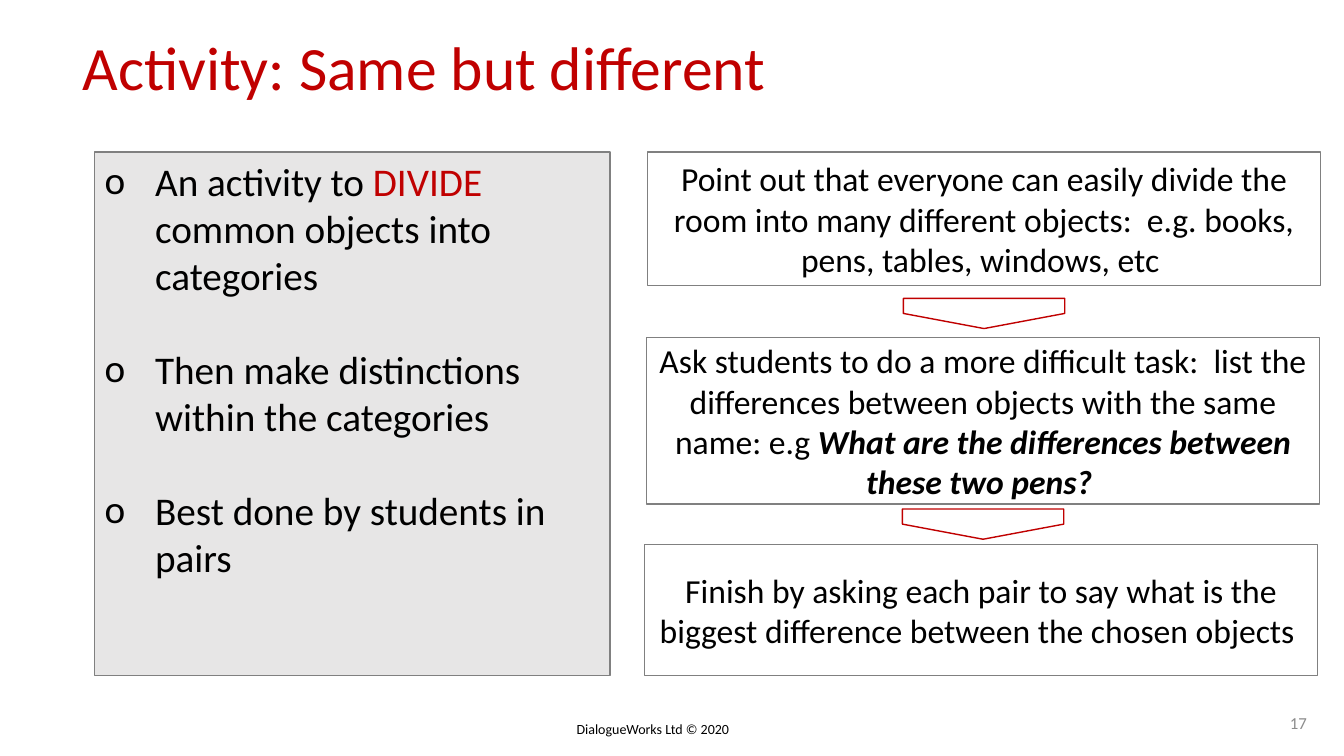
"""Build the activity slide: a bulleted panel beside three steps joined by arrows."""
from dataclasses import dataclass

from lxml import etree
from pptx import Presentation
from pptx.dml.color import RGBColor
from pptx.enum.shapes import MSO_SHAPE
from pptx.enum.text import MSO_ANCHOR, PP_ALIGN
from pptx.oxml.ns import qn
from pptx.util import Inches, Pt

RECTANGLE, PENTAGON = MSO_SHAPE.RECTANGLE, MSO_SHAPE.PENTAGON
TOP, MIDDLE = MSO_ANCHOR.TOP, MSO_ANCHOR.MIDDLE
LEFT, CENTER, RIGHT = PP_ALIGN.LEFT, PP_ALIGN.CENTER, PP_ALIGN.RIGHT

FONT = "Calibri"
COLORS = {
    "red": "C00000",
    "black": "000000",
    "gray": "808080",
    "panel": "E7E6E6",
    "number": "8C8C8C",
}
ARROW_LENGTH, ARROW_DEPTH = 1.6, 0.3
BULLET_INDENT = 0.5
BULLET_GAP = 33.5


@dataclass(frozen=True)
class Span:
    text: str
    color: str = "black"
    strong: bool = False


@dataclass(frozen=True)
class TextStyle:
    size: float
    align: PP_ALIGN = LEFT
    anchor: MSO_ANCHOR = TOP
    wrap: bool = True
    bullet: str = ""
    gap: float = 0
    line_spacing: float = 1.0


@dataclass(frozen=True)
class Block:
    area: tuple[float, float, float, float]
    style: TextStyle
    paragraphs: list[list[Span]]
    framed: bool = False
    fill: str = ""


STEP = TextStyle(24, CENTER, MIDDLE)
BLOCKS = [
    Block((5.62, 7.1, 1.75, 0.27), TextStyle(10, wrap=False),
          [[Span("DialogueWorks Ltd © 2020")]]),
    Block((12.55, 6.97, 0.51, 0.4), TextStyle(12, RIGHT, MIDDLE),
          [[Span("17", "number")]]),
    Block((0.72, 0.32, 9.79, 1.06), TextStyle(44, line_spacing=0.9),
          [[Span("Activity: Same but different", "red")]]),
    Block((0.94, 1.51, 5.11, 5.19), TextStyle(28, bullet="o", gap=BULLET_GAP), [
        [Span("An activity to "), Span("DIVIDE", "red"),
         Span(" common objects into categories")],
        [Span("Then make distinctions within the categories")],
        [Span("Best done by students in pairs")],
    ], framed=True, fill="panel"),
    Block((6.42, 1.51, 6.68, 1.32), STEP, [[Span(
        "Point out that everyone can easily divide the room into many different "
        "objects:  e.g. books, pens, tables, windows, etc ")]], framed=True),
    Block((6.41, 3.35, 6.68, 1.65), STEP, [[
        Span("Ask students to do a more difficult task:  list the differences "
             "between objects with the same name: e.g "),
        Span("What are the differences between these two pens? ", strong=True),
    ]], framed=True),
    Block((6.39, 5.4, 6.68, 1.3), STEP, [[Span(
        "Finish by asking each pair to say what is the biggest difference "
        "between the chosen objects ")]], framed=True),
]
ARROW_CENTERS = [(9.76, 3.11), (9.75, 5.2)]


def rgb(name: str) -> RGBColor:
    return RGBColor.from_string(COLORS[name])


def apply_format(target, values: dict) -> None:
    for name, value in values.items():
        setattr(target, name, value)


def add_outlined(page, kind, area, line: str, fill: str = ""):
    shape = page.shapes.add_shape(kind, *map(Inches, area))
    shape.shadow.inherit = False
    if fill:
        shape.fill.solid()
        shape.fill.fore_color.rgb = rgb(fill)
    else:
        shape.fill.background()
    shape.line.color.rgb = rgb(line)
    shape.line.width = Pt(1)
    return shape


def add_bullet(para, character: str) -> None:
    properties = para._p.get_or_add_pPr()
    indent = Inches(BULLET_INDENT)
    properties.set("marL", str(indent))
    properties.set("indent", str(-indent))
    etree.SubElement(properties, qn("a:buFont"), typeface=FONT)
    etree.SubElement(properties, qn("a:buChar"), char=character)


def write_paragraph(para, spans: list[Span], style: TextStyle, gap: float) -> None:
    if style.bullet:
        add_bullet(para, style.bullet)
    apply_format(para, {"alignment": style.align, "space_before": Pt(gap),
                        "line_spacing": style.line_spacing})
    for span in spans:
        run = para.add_run()
        run.text = span.text
        apply_format(run.font, {"name": FONT, "size": Pt(style.size),
                                "bold": span.strong, "italic": span.strong})
        run.font.color.rgb = rgb(span.color)


def draw_block(page, block: Block) -> None:
    if block.framed:
        box = add_outlined(page, RECTANGLE, block.area, "gray", block.fill)
    else:
        box = page.shapes.add_textbox(*map(Inches, block.area))
    frame = box.text_frame
    apply_format(frame, {"word_wrap": block.style.wrap,
                         "vertical_anchor": block.style.anchor})
    for index, spans in enumerate(block.paragraphs):
        para = frame.add_paragraph() if index else frame.paragraphs[0]
        write_paragraph(para, spans, block.style, block.style.gap if index else 0)


def draw_arrow(page, center: tuple[float, float]) -> None:
    x, y = center
    area = (x - ARROW_DEPTH / 2, y - ARROW_LENGTH / 2, ARROW_DEPTH, ARROW_LENGTH)
    add_outlined(page, PENTAGON, area, "red").rotation = 90


def main() -> None:
    deck = Presentation()
    apply_format(deck, {"slide_width": Inches(13.33), "slide_height": Inches(7.5)})
    page = deck.slides.add_slide(deck.slide_layouts[6])
    for block in BLOCKS:
        draw_block(page, block)
    for center in ARROW_CENTERS:
        draw_arrow(page, center)
    deck.save("out.pptx")


if __name__ == "__main__":
    main()
